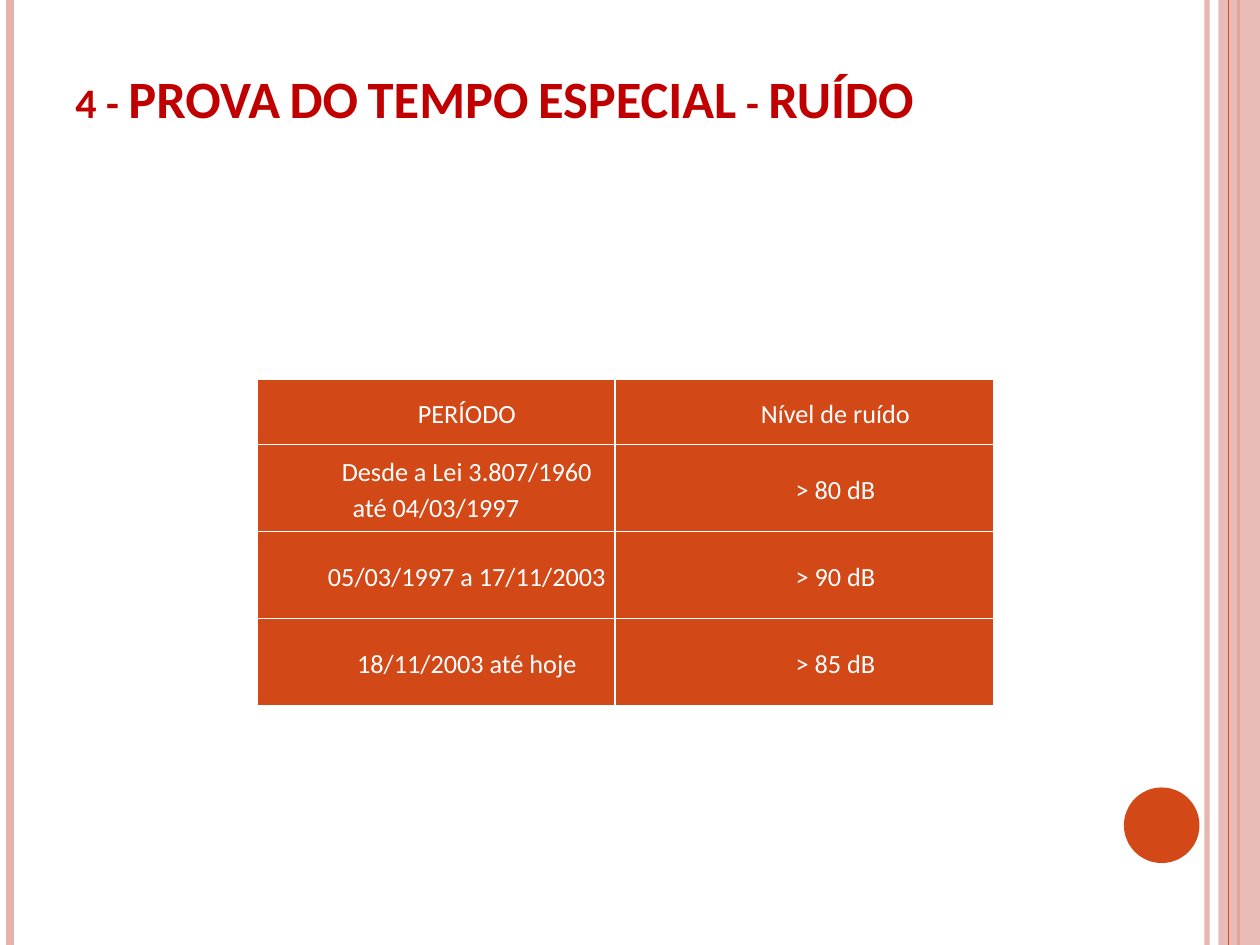
from lxml import etree
from pptx import Presentation
from pptx.dml.color import RGBColor
from pptx.enum import shapes, text
from pptx.oxml import parse_xml
from pptx.oxml.ns import qn
from pptx.util import Inches, Pt

ORANGE, PINK, RED, WHITE = "D34817", "E6B1AC", "C00000", "FFFFFF"
A_NS = "http://schemas.openxmlformats.org/drawingml/2006/main"


def paint(color_format, color, alpha=None):
    """Set a solid fill, with opacity in percent if given."""
    color_format.solid()
    color_format.fore_color.rgb = RGBColor.from_string(color)
    if alpha:
        srgb = color_format._xPr.find(".//" + qn("a:srgbClr"))
        etree.SubElement(srgb, qn("a:alpha"), val=str(alpha * 1000))


def style_font(font, **values):
    paint(font.fill, values.pop("color"))
    for name, value in values.items():
        setattr(font, name, value)


prs = Presentation()
prs.slide_width, prs.slide_height = Inches(10), Inches(7.5)
slide = prs.slides.add_slide(prs.slide_layouts[6])

# Side rules, the translucent band and the round marker
rules = [(9.58, PINK, 3, 93), (0.08, PINK, 4.5, None),
         (9.83, ORANGE, 1.5, None), (9.75, ORANGE, 0.75, None)]
for x, color, width, alpha in rules:
    if x == 9.75:  # the band lies beneath the last rule only
        band = slide.shapes.add_shape(shapes.MSO_SHAPE.RECTANGLE, Inches(9.67), 0,
                                      Inches(0.33), prs.slide_height)
        paint(band.fill, PINK, 87)
    rule = slide.shapes.add_connector(shapes.MSO_CONNECTOR.STRAIGHT, Inches(x), 0,
                                      Inches(x), prs.slide_height)
    rule.line.width = Pt(width)
    paint(rule.line.fill, color, alpha)
    etree.SubElement(rule._element.spPr, qn("a:effectLst"))

marker = slide.shapes.add_shape(shapes.MSO_SHAPE.OVAL, Inches(8.92), Inches(6.25),
                                Inches(0.6), Inches(0.6))
paint(marker.fill, ORANGE)
for ornament in (band, marker):
    ornament.line.fill.background()
    ornament.shadow.inherit = False

# Title
title = slide.shapes.add_textbox(Inches(0.5), Inches(0.3), Inches(8.17), Inches(1.25))
title_format = {"word_wrap": True, "vertical_anchor": text.MSO_ANCHOR.BOTTOM,
                "margin_bottom": Inches(0.53)}
for name, value in title_format.items():
    setattr(title.text_frame, name, value)
heading = title.text_frame.paragraphs[0].add_run()
heading.text = "4 - PROVA DO TEMPO ESPECIAL - RUÍDO"
style_font(heading.font, color=RED, size=Pt(30), name="Calibri", bold=True)
heading._r.get_or_add_rPr().set("cap", "small")

# Noise limits by period
limits = [("PERÍODO", "Nível de ruído"),
          ("Desde a Lei 3.807/1960 até 04/03/1997", "> 80 dB"),
          ("05/03/1997 a 17/11/2003", "> 90 dB"),
          ("18/11/2003 até hoje", "> 85 dB")]
table = slide.shapes.add_table(4, 2, Inches(2.04), Inches(3.01),
                               Inches(5.85), Inches(2.59)).table
for column, width in zip(table.columns, (2.84, 3.01)):
    column.width = Inches(width)
for row, height in zip(table.rows, (0.52, 0.69, 0.69, 0.69)):
    row.height = Inches(height)

cell_format = {"vertical_anchor": text.MSO_ANCHOR.MIDDLE,
               "margin_left": Inches(0.06), "margin_right": Inches(0.06),
               "margin_top": 0, "margin_bottom": 0}
for row, entries in zip(table.rows, limits):
    for cell, entry in zip(row.cells, entries):
        for name, value in cell_format.items():
            setattr(cell, name, value)
        paragraph = cell.text_frame.paragraphs[0]
        paragraph.alignment = text.PP_ALIGN.CENTER
        paragraph.line_spacing = 1.15
        paragraph._p.get_or_add_pPr().set("indent", str(Inches(0.49)))
        run = paragraph.add_run()
        run.text = entry
        style_font(run.font, color=WHITE, size=Pt(15), name="Calibri", bold=False)
        for side in ("lnL", "lnR", "lnT", "lnB"):
            cell._tc.get_or_add_tcPr().append(parse_xml(
                f'<a:{side} xmlns:a="{A_NS}" w="{Pt(1)}"><a:solidFill>'
                f'<a:srgbClr val="{WHITE}"/></a:solidFill></a:{side}>'))
        paint(cell.fill, ORANGE)

prs.save("out.pptx")
